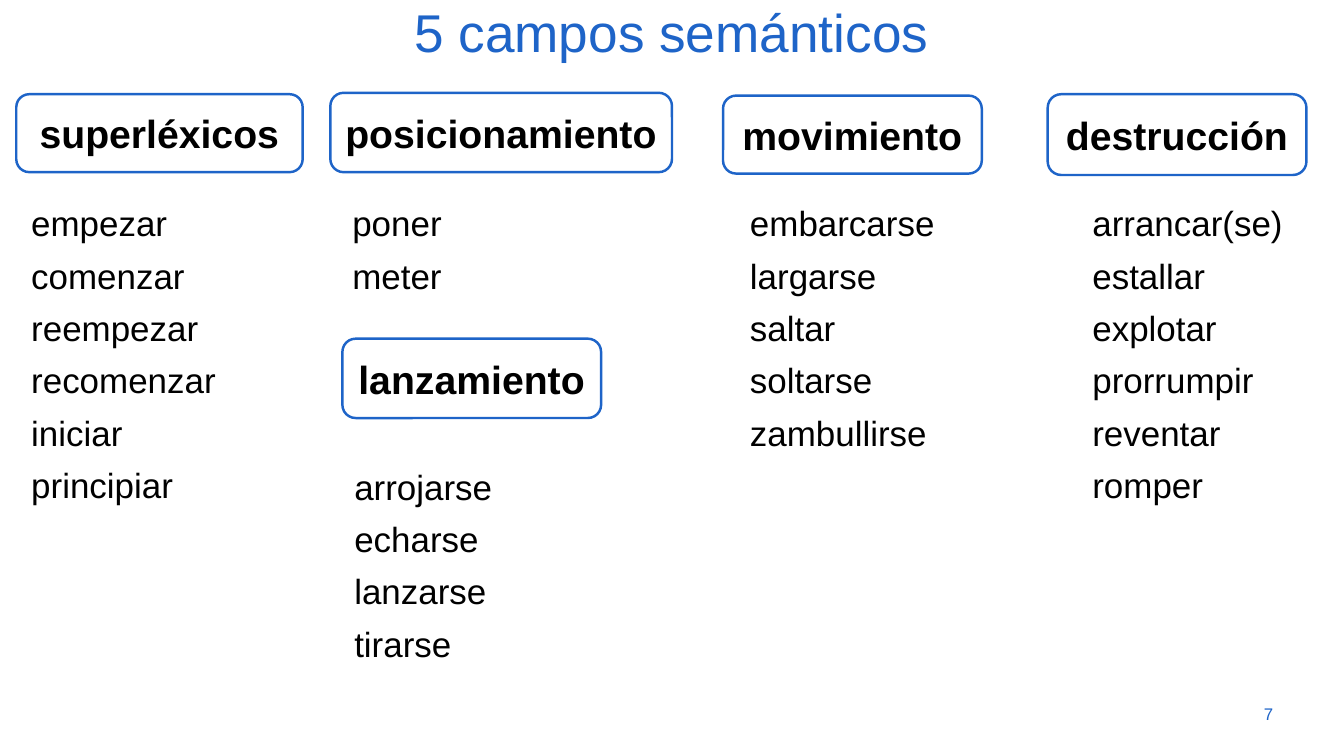
"""Build the slide that sorts Spanish verbs into five semantic fields."""
from dataclasses import dataclass

from lxml import etree
from pptx import Presentation
from pptx import util as u
from pptx.dml.color import RGBColor
from pptx.enum import shapes, text
from pptx.oxml import ns


@dataclass(frozen=True)
class Theme:
    font: str = "Arial"
    blue: RGBColor = RGBColor(0x1E, 0x64, 0xC8)
    black: RGBColor = RGBColor(0, 0, 0)
    title_size: float = 54
    label_size: float = 39.8
    verb_size: float = 35.5
    number_size: float = 17.1
    outline: float = 2.5


@dataclass(frozen=True)
class Area:
    left: float
    top: float
    width: float
    height: float

    def lengths(self) -> tuple:
        return tuple(u.Inches(n) for n in (self.left, self.top, self.width, self.height))


@dataclass(frozen=True)
class Field:
    label: str
    label_area: Area
    verbs: tuple[str, ...]
    verbs_area: Area


THEME = Theme()
LIST_TOP = 2.65
FIELDS = (
    Field("superléxicos", Area(0.23, 1.33, 4.04, 1.1),
          ("empezar", "comenzar", "reempezar", "recomenzar", "iniciar", "principiar"),
          Area(0.34, LIST_TOP, 3.57, 4.41)),
    Field("posicionamiento", Area(4.66, 1.31, 4.82, 1.12),
          ("poner", "meter"), Area(4.87, LIST_TOP, 3.57, 1.54)),
    Field("movimiento", Area(10.2, 1.35, 3.65, 1.1),
          ("embarcarse", "largarse", "saltar", "soltarse", "zambullirse"),
          Area(10.48, LIST_TOP, 3.57, 3.62)),
    Field("destrucción", Area(14.78, 1.33, 3.65, 1.14),
          ("arrancar(se)", "estallar", "explotar", "prorrumpir", "reventar", "romper"),
          Area(15.31, LIST_TOP, 3.31, 5.13)),
    Field("lanzamiento", Area(4.83, 4.78, 3.65, 1.12),
          ("arrojarse", "echarse", "lanzarse", "tirarse"),
          Area(4.9, 6.37, 3.57, 3.69)),
)


def place(box, area: Area) -> None:
    box.left, box.top, box.width, box.height = area.lengths()


def write(box, words: str, size: float, color: RGBColor, align: text.PP_ALIGN,
          anchor: text.MSO_ANCHOR, spacing: float = 1.0, bold: bool = False) -> None:
    frame = box.text_frame
    frame.text = words
    frame.word_wrap = True
    frame.auto_size = text.MSO_AUTO_SIZE.NONE
    frame.vertical_anchor = anchor
    frame.margin_left = frame.margin_right = u.Inches(0.1)
    frame.margin_top = frame.margin_bottom = u.Inches(0.05)
    for para in frame.paragraphs:
        para.alignment = align
        para.line_spacing = spacing
        para.space_before = para.space_after = u.Pt(0)
        for span in para.runs:
            span.font.name = THEME.font
            span.font.size = u.Pt(size)
            span.font.bold = bold
            span.font.color.rgb = color


def remove_bullets(box) -> None:
    for para in box.text_frame.paragraphs:
        properties = para._p.get_or_add_pPr()
        properties.set("marL", "0")
        properties.set("indent", "0")
        etree.SubElement(properties, ns.qn("a:buNone"))


def add_label(page, field: Field) -> None:
    box = page.shapes.add_shape(shapes.MSO_SHAPE.ROUNDED_RECTANGLE,
                                *field.label_area.lengths())
    box.shadow.inherit = False
    box.fill.background()
    box.line.color.rgb = THEME.blue
    box.line.width = u.Pt(THEME.outline)
    write(box, field.label, THEME.label_size, THEME.black,
          text.PP_ALIGN.CENTER, text.MSO_ANCHOR.MIDDLE, bold=True)


def fill_list(box, field: Field) -> None:
    place(box, field.verbs_area)
    write(box, "\n".join(field.verbs), THEME.verb_size, THEME.black,
          text.PP_ALIGN.LEFT, text.MSO_ANCHOR.TOP, spacing=1.25)
    remove_bullets(box)


def main() -> None:
    deck = Presentation()
    deck.slide_width, deck.slide_height = u.Inches(18.96), u.Inches(10.67)
    page = deck.slides.add_slide(deck.slide_layouts.get_by_name("Comparison"))

    title, *bodies = page.placeholders
    place(title, Area(0.88, 0.01, 17.18, 0.94))
    write(title, "5 campos semánticos", THEME.title_size, THEME.blue,
          text.PP_ALIGN.CENTER, text.MSO_ANCHOR.BOTTOM, spacing=0.9)

    bodies.append(page.shapes.add_textbox(*FIELDS[-1].verbs_area.lengths()))
    for field, body in zip(FIELDS, bodies):
        add_label(page, field)
        fill_list(body, field)

    number = page.shapes.add_textbox(*Area(17.05, 9.79, 1.01, 0.57).lengths())
    write(number, "7", THEME.number_size, THEME.blue,
          text.PP_ALIGN.RIGHT, text.MSO_ANCHOR.MIDDLE)

    deck.save("out.pptx")


if __name__ == "__main__":
    main()
